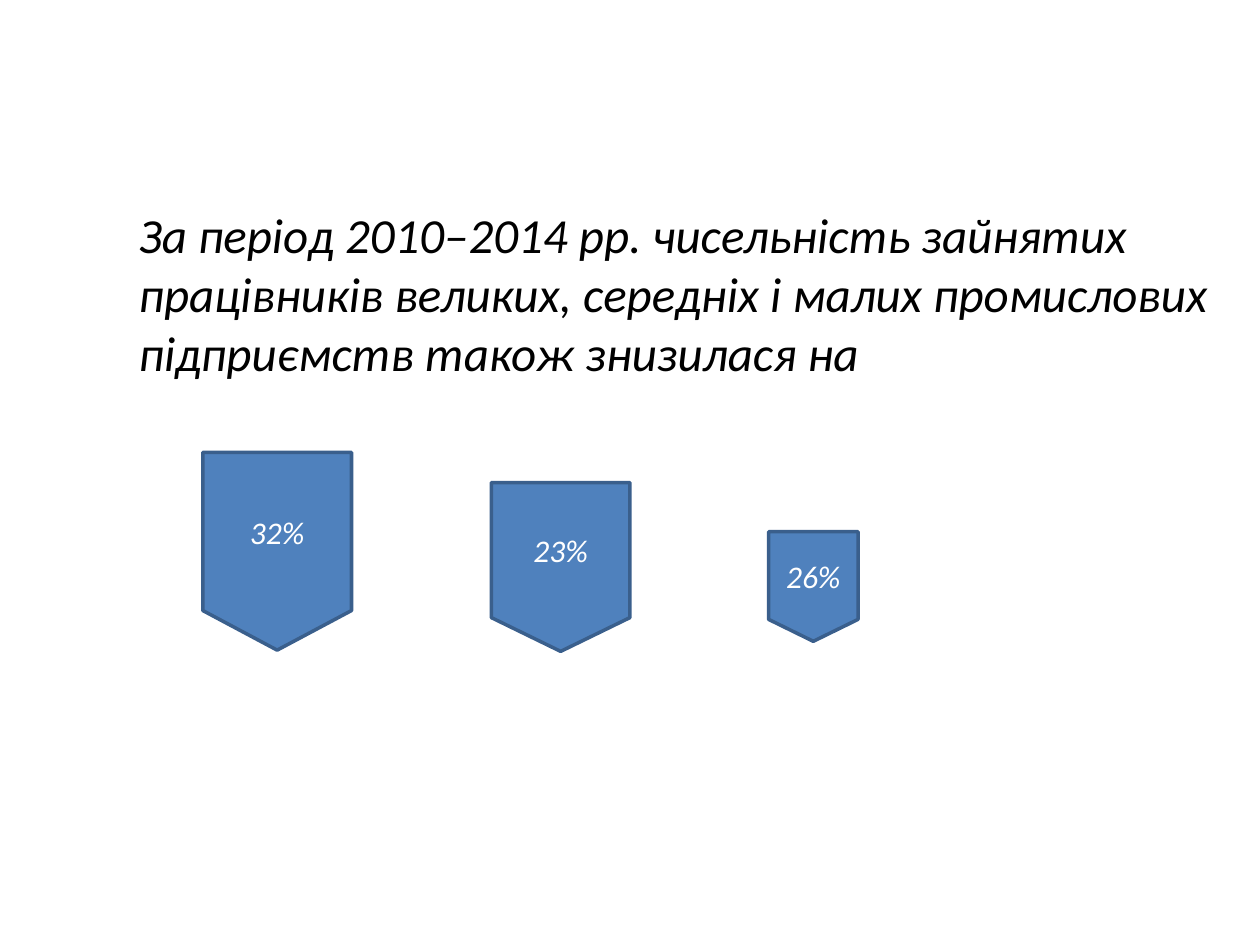
from dataclasses import dataclass

from pptx import Presentation
from pptx.dml.color import RGBColor
from pptx.enum.shapes import MSO_SHAPE
from pptx.enum.text import MSO_ANCHOR, MSO_AUTO_SIZE, PP_ALIGN
from pptx.util import Inches, Pt

PENNANT = MSO_SHAPE.FLOWCHART_OFFPAGE_CONNECTOR
MIDDLE = MSO_ANCHOR.MIDDLE
NO_AUTOFIT = MSO_AUTO_SIZE.NONE
LEFT, CENTER = PP_ALIGN.LEFT, PP_ALIGN.CENTER
TITLE_ONLY = 5


@dataclass(frozen=True)
class Theme:
    font: str = "Calibri"
    ink: str = "000000"
    light: str = "FFFFFF"
    fill: str = "4F81BD"
    outline: str = "3A5F8C"
    title_size: int = 28
    label_size: int = 18
    outline_width: int = 2


THEME = Theme()
SLIDE_SIZE = (10, 7.5)
TITLE = (
    "За період 2010–2014 рр. чисельність зайнятих працівників великих, "
    "середніх і малих промислових підприємств також знизилася на"
)
TITLE_BOX = (1, 1.7, 9, 1.25)
DECLINES = [
    ("32%", (1.61, 3.59, 1.18, 1.57)),
    ("23%", (3.9, 3.83, 1.1, 1.34)),
    ("26%", (6.1, 4.22, 0.71, 0.87)),
]


def place(shape, box):
    for name, value in zip(("left", "top", "width", "height"), box):
        setattr(shape, name, Inches(value))


def write(shape, text, size, color, alignment):
    frame = shape.text_frame
    frame.text = text
    frame_format = {"word_wrap": True, "auto_size": NO_AUTOFIT, "vertical_anchor": MIDDLE}
    for name, value in frame_format.items():
        setattr(frame, name, value)
    paragraph = frame.paragraphs[0]
    paragraph.alignment = alignment
    font = paragraph.runs[0].font
    font_format = {"name": THEME.font, "size": Pt(size), "italic": True}
    for name, value in font_format.items():
        setattr(font, name, value)
    font.color.rgb = RGBColor.from_string(color)


def add_pennant(slide, label, box):
    shape = slide.shapes.add_shape(PENNANT, *map(Inches, box))
    shape.shadow.inherit = False
    shape.fill.solid()
    shape.fill.fore_color.rgb = RGBColor.from_string(THEME.fill)
    shape.line.color.rgb = RGBColor.from_string(THEME.outline)
    shape.line.width = Pt(THEME.outline_width)
    write(shape, label, THEME.label_size, THEME.light, CENTER)


def main():
    presentation = Presentation()
    presentation.slide_width, presentation.slide_height = map(Inches, SLIDE_SIZE)
    slide = presentation.slides.add_slide(presentation.slide_layouts[TITLE_ONLY])
    title = slide.shapes.title
    place(title, TITLE_BOX)
    write(title, TITLE, THEME.title_size, THEME.ink, LEFT)
    for label, box in DECLINES:
        add_pennant(slide, label, box)
    presentation.save("out.pptx")


if __name__ == "__main__":
    main()
